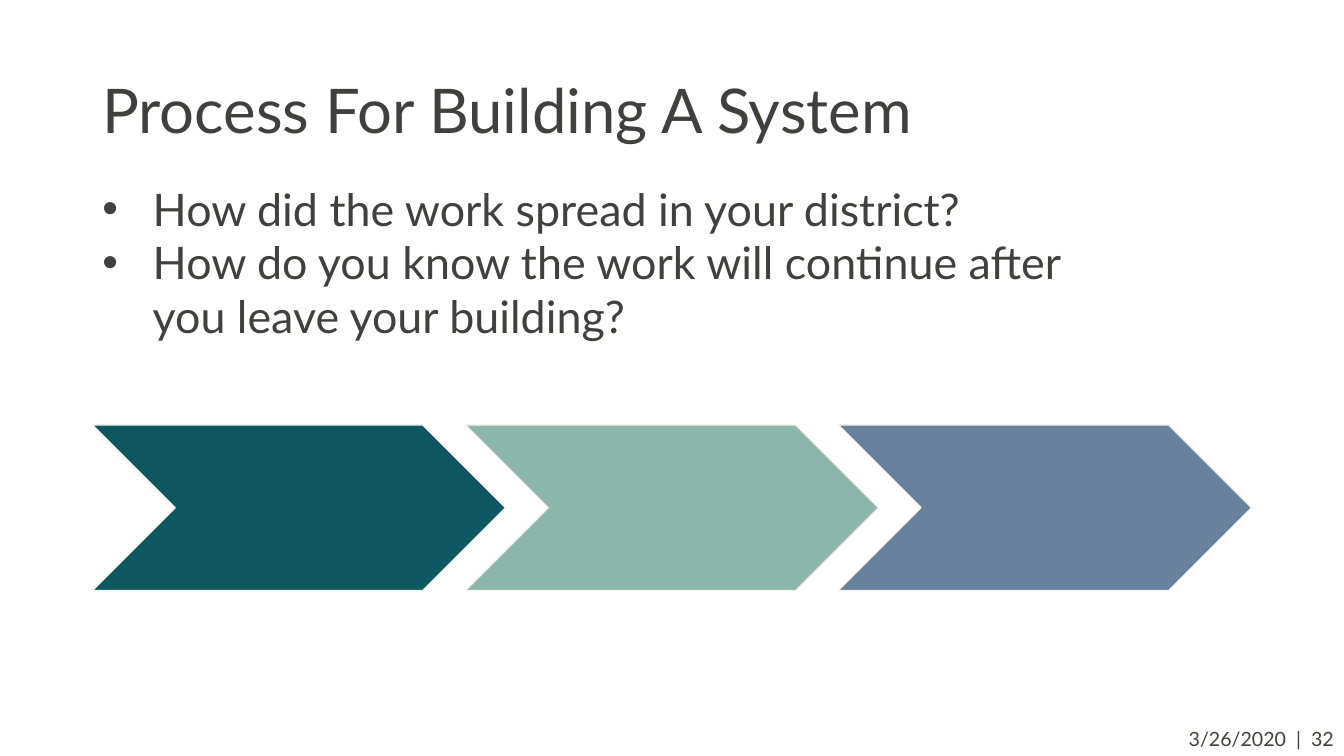
"""Build the slide on a grid of 160 columns by 90 rows."""
from dataclasses import dataclass

from lxml import etree
from pptx import Presentation
from pptx import util as u
from pptx.dml.color import RGBColor
from pptx.enum import shapes, text
from pptx.oxml.ns import qn

COLUMNS, ROWS = 160, 90
CELL = u.Inches(1) // 12
MARGIN = 11


@dataclass(frozen=True)
class Theme:
    """Hold the font, colours and type sizes of the slide."""
    font: str = "Lato"
    ink: str = "40403D"
    outline: str = "F7F5EB"
    steps: tuple[str, ...] = ("0D5761", "8CB5AB", "68829E")
    title: int = 44
    body: int = 32
    footer: int = 14


@dataclass(frozen=True)
class Area:
    """Describe a rectangle in grid columns and rows."""
    left: float
    top: float
    width: float
    height: float

    def lengths(self) -> tuple[int, ...]:
        """Return left, top, width and height as slide lengths."""
        return tuple(u.Emu(round(cells * CELL)) for cells in
                     (self.left, self.top, self.width, self.height))


@dataclass(frozen=True)
class Step:
    """Describe one chevron of the process."""
    area: Area
    colour: str


THEME = Theme()
TITLE = Area(MARGIN, 4.8, 138, 17.4)
BODY = Area(MARGIN, 21, 120.8, 20.6)
FOOTER = Area(139.5, 85.9, 20.5, 4.1)
STEP_WIDTH, STEP_HEIGHT, STEP_TOP, STEP_PITCH = 49.2, 19.7, 50.6, 44.4
STEPS = [Step(Area(MARGIN + index * STEP_PITCH, STEP_TOP, STEP_WIDTH, STEP_HEIGHT), colour)
         for index, colour in enumerate(THEME.steps)]
QUESTIONS = ["How did the work spread in your district?",
             "How do you know the work will continue after you leave your building?"]


def add_bullet(para) -> None:
    """Give a paragraph a round bullet with a hanging indent."""
    properties = para._p.get_or_add_pPr()
    indent = u.Inches(0.5)
    properties.set("marL", str(indent))
    properties.set("indent", str(-indent))
    etree.SubElement(properties, qn("a:buFont"), typeface="Arial")
    etree.SubElement(properties, qn("a:buChar"), char="•")


def write(box, lines: list[str], *, size: int, align=text.PP_ALIGN.LEFT,
          anchor=text.MSO_ANCHOR.TOP, spacing: float = 1.0, bullet: bool = False) -> None:
    """Fill a box with formatted paragraphs."""
    frame = box.text_frame
    frame.word_wrap = True
    frame.auto_size = text.MSO_AUTO_SIZE.NONE
    frame.vertical_anchor = anchor
    for index, line in enumerate(lines):
        para = frame.add_paragraph() if index else frame.paragraphs[0]
        if bullet:
            add_bullet(para)
        para.alignment = align
        para.line_spacing = spacing
        span = para.add_run()
        span.text = line
        span.font.name = THEME.font
        span.font.size = u.Pt(size)
        span.font.color.rgb = RGBColor.from_string(THEME.ink)


def draw_step(page, step: Step) -> None:
    """Draw one chevron."""
    chevron = page.shapes.add_shape(shapes.MSO_SHAPE.CHEVRON, *step.area.lengths())
    chevron.shadow.inherit = False
    chevron.fill.solid()
    chevron.fill.fore_color.rgb = RGBColor.from_string(step.colour)
    chevron.line.color.rgb = RGBColor.from_string(THEME.outline)
    chevron.line.width = u.Pt(1)


def main() -> None:
    """Build and save the deck."""
    deck = Presentation()
    deck.slide_width, deck.slide_height = COLUMNS * CELL, ROWS * CELL
    page = deck.slides.add_slide(deck.slide_layouts.get_by_name("Title Only"))
    title = page.shapes.title
    title.left, title.top, title.width, title.height = TITLE.lengths()
    write(title, ["Process For Building A System"], size=THEME.title,
          anchor=text.MSO_ANCHOR.MIDDLE, spacing=0.9)
    write(page.shapes.add_textbox(*BODY.lengths()), QUESTIONS, size=THEME.body, bullet=True)
    for step in STEPS:
        draw_step(page, step)
    write(page.shapes.add_textbox(*FOOTER.lengths()), ["3/26/2020  |  32"],
          size=THEME.footer, align=text.PP_ALIGN.RIGHT)
    deck.save("out.pptx")


if __name__ == "__main__":
    main()
